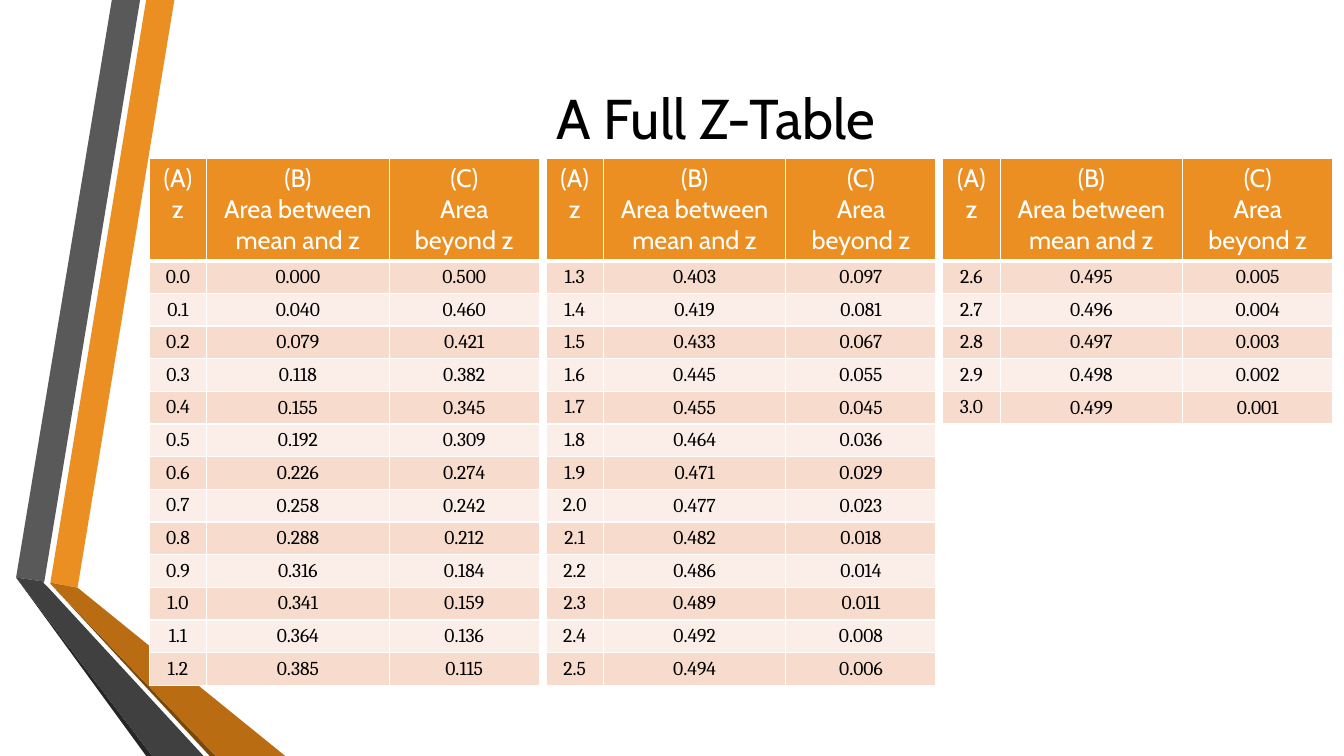
from lxml import etree
from pptx import Presentation, util as u
from pptx.dml.color import RGBColor
from pptx.enum import text
from pptx.oxml.ns import qn

WHITE, BLACK, ORANGE = "FFFFFF", "000000", "EB8F22"
ROW_FILLS = ["F7DBCD", "FBEEE8"]


def paint(fill, color):
    fill.solid()
    fill.fore_color.rgb = RGBColor.from_string(color)


def style_text(frame, font, size, color):
    for para in frame.paragraphs:
        para.alignment = text.PP_ALIGN.CENTER
        for span in para.runs:
            span.font.name = font
            span.font.size = u.Pt(size)
            paint(span.font.fill, color)


deck = Presentation()
deck.slide_width, deck.slide_height = u.Inches(13.33), u.Inches(7.5)
page = deck.slides.add_slide(deck.slide_layouts[5])

# Folded ribbons on the left
ribbons = [
    (ORANGE, [(0.5, 5.78), (0.77, 5.83), (1.73, 0), (1.45, 0)]),
    ("595959", [(1.39, 0), (1.11, 0), (0.16, 5.73), (0.44, 5.77)]),
    ("262626", [(0.16, 5.73), (1.45, 7.5), (1.51, 7.5)]),
    ("7B480B", [(0.5, 5.79), (2.08, 7.5), (2.14, 7.5)]),
    ("B96C11", [(0.5, 5.79), (2.14, 7.5), (2.83, 7.5), (0.77, 5.83), (0.5, 5.78)]),
    ("404040", [(2.02, 7.5), (0.48, 5.83), (0.43, 5.78), (0.44, 5.77),
                (0.16, 5.73), (1.51, 7.5)]),
]
for color, corners in ribbons:
    points = [(u.Inches(x), u.Inches(y)) for x, y in corners]
    builder = page.shapes.build_freeform(*points[0])
    builder.add_line_segments(points[1:], close=True)
    ribbon = builder.convert_to_shape()
    ribbon.shadow.inherit = False
    paint(ribbon.fill, color)
    ribbon.line.fill.background()

# Title
title = page.shapes.title
title.left, title.top = u.Inches(1.62), u.Inches(0.75)
title.width, title.height = u.Inches(10.96), u.Inches(0.82)
title.text_frame.text = "A Full Z-Table"
title.text_frame.vertical_anchor = text.MSO_ANCHOR.MIDDLE
style_text(title.text_frame, "Cabin", 40, BLACK)

# Areas between the mean and z, and beyond z, for z = 0.0, 0.1, ... 3.0
between = """0.000 0.040 0.079 0.118 0.155 0.192 0.226 0.258 0.288 0.316 0.341
    0.364 0.385 0.403 0.419 0.433 0.445 0.455 0.464 0.471 0.477 0.482 0.486
    0.489 0.492 0.494 0.495 0.496 0.497 0.498 0.499""".split()
beyond = """0.500 0.460 0.421 0.382 0.345 0.309 0.274 0.242 0.212 0.184 0.159
    0.136 0.115 0.097 0.081 0.067 0.055 0.045 0.036 0.029 0.023 0.018 0.014
    0.011 0.008 0.006 0.005 0.004 0.003 0.002 0.001""".split()
z_rows = [(f"{i / 10:.1f}", *areas) for i, areas in enumerate(zip(between, beyond))]
headings = ("(A)\nz", "(B)\nArea between mean and z", "(C)\nArea beyond z")

# Three tables side by side, up to 13 rows each
rows_each = 13
column_widths = [0.57, 1.81, 1.49]
header_height, row_height = 1.01, 0.32
for number in range(3):
    rows = [headings] + z_rows[number * rows_each:(number + 1) * rows_each]
    height = header_height + row_height * (len(rows) - 1)
    table = page.shapes.add_table(
        len(rows), 3, u.Inches(1.48 + 3.935 * number), u.Inches(1.57),
        u.Inches(sum(column_widths)), u.Inches(height)).table
    for column, width in zip(table.columns, column_widths):
        column.width = u.Inches(width)
    for r, values in enumerate(rows):
        header = r == 0
        table.rows[r].height = u.Inches(header_height if header else row_height)
        for c, value in enumerate(values):
            cell = table.cell(r, c)
            cell.text = value
            paint(cell.fill, ORANGE if header else ROW_FILLS[(r - 1) % 2])
            if header:
                style_text(cell.text_frame, "Cabin", 18, WHITE)
            else:
                style_text(cell.text_frame, "Cambria", 14, BLACK)
                if c > 0:
                    cell.vertical_anchor = text.MSO_ANCHOR.MIDDLE
                    cell.margin_left = cell.margin_right = u.Inches(0.07)
                    cell.margin_top = cell.margin_bottom = 0
            # White cell borders, thicker under the header
            props = cell._tc.get_or_add_tcPr()
            for place, side in enumerate(("lnL", "lnR", "lnT", "lnB")):
                points = 3 if header and side == "lnB" else 1
                border = etree.Element(qn("a:" + side), w=str(u.Pt(points)))
                fill = etree.SubElement(border, qn("a:solidFill"))
                etree.SubElement(fill, qn("a:srgbClr"), val=WHITE)
                props.insert(place, border)

deck.save("out.pptx")
